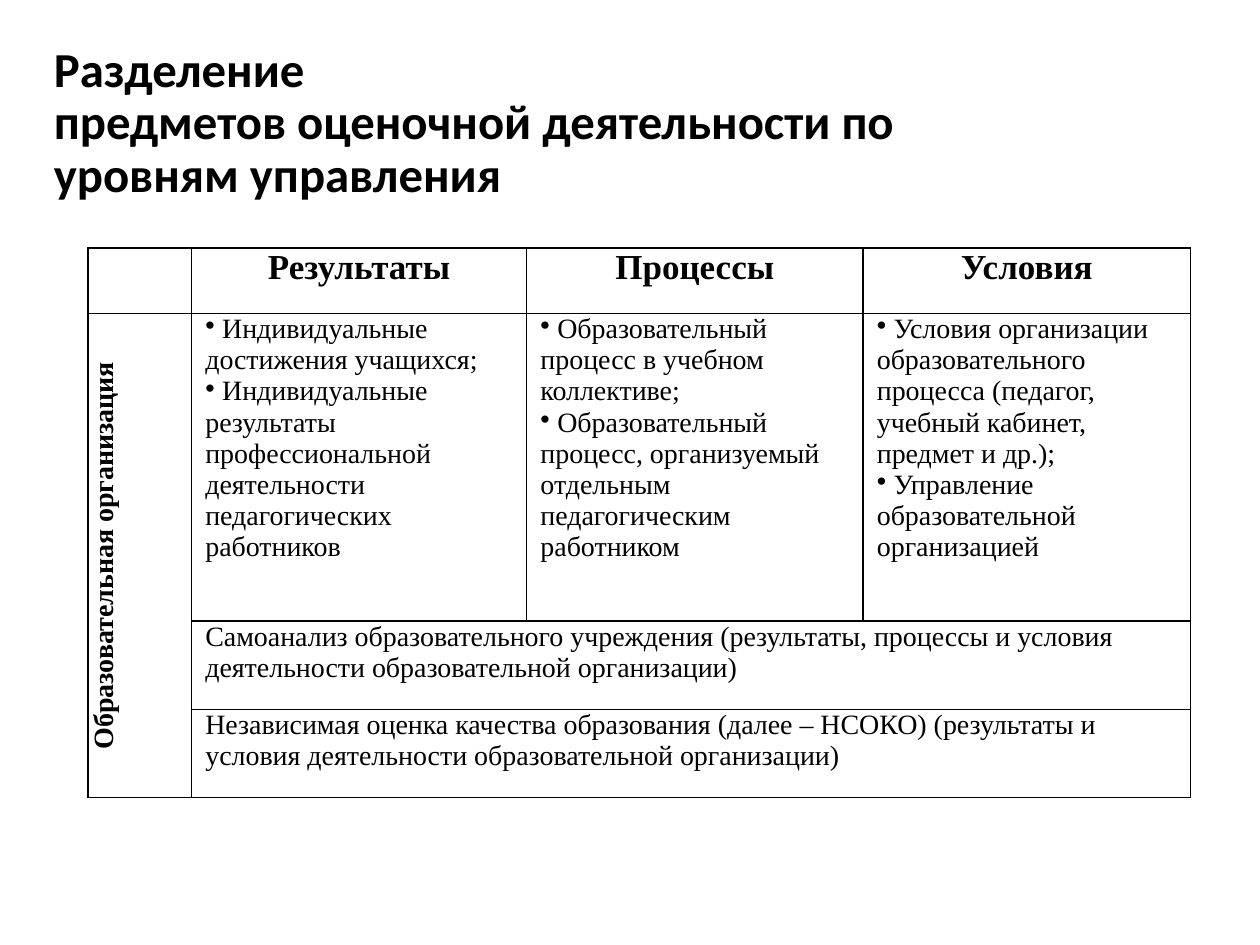
from dataclasses import dataclass

from lxml import etree
from pptx import Presentation
from pptx import util as u
from pptx.dml.color import RGBColor
from pptx.enum import text
from pptx.oxml import ns

COLORS = {"ink": "000000", "paper": "FFFFFF"}
COLUMN_WIDTHS = (0.82, 2.66, 2.67, 2.6)
ROW_HEIGHTS = (0.52, 2.44, 0.7, 0.7)
MARGINS = {"margin_left": 0.02, "margin_right": 0.02, "margin_top": 0, "margin_bottom": 0}
BODY = {"name": "Times New Roman", "size": u.Pt(16), "bold": False}
SIDE = BODY | {"bold": True}
HEADING = SIDE | {"size": u.Pt(20)}
TITLE = {"name": "Calibri", "size": u.Pt(27.9), "bold": True}


@dataclass
class Entry:
    row: int
    column: int
    lines: tuple[str, ...]
    font: dict
    rows: int = 1
    columns: int = 1
    centered: bool = False
    indented: bool = False
    bulleted: bool = False


HEADINGS = ("Результаты", "Процессы", "Условия")
SUBJECTS = (
    (" Индивидуальные достижения учащихся;",
     " Индивидуальные результаты профессиональной деятельности педагогических работников"),
    (" Образовательный процесс в учебном коллективе;",
     " Образовательный процесс, организуемый отдельным педагогическим работником"),
    (" Условия организации образовательного процесса (педагог, учебный кабинет, предмет и др.);",
     " Управление образовательной организацией"),
)
ASSESSMENTS = (
    "Самоанализ образовательного учреждения (результаты, процессы и условия "
    "деятельности образовательной организации)",
    "Независимая оценка качества образования (далее – НСОКО) (результаты и "
    "условия деятельности образовательной организации)",
)
ENTRIES = [
    *(Entry(0, column, (heading,), HEADING, centered=True)
      for column, heading in enumerate(HEADINGS, 1)),
    Entry(1, 0, ("Образовательная организация",), SIDE, rows=3, centered=True),
    *(Entry(1, column, subjects, BODY, indented=True, bulleted=True)
      for column, subjects in enumerate(SUBJECTS, 1)),
    *(Entry(row, 1, (assessment,), BODY, columns=3, indented=True)
      for row, assessment in enumerate(ASSESSMENTS, 2)),
]


def add_element(parent, tag: str, **attributes):
    return etree.SubElement(parent, ns.qn(tag), attributes)


def style_font(font, values: dict) -> None:
    for name, value in values.items():
        setattr(font, name, value)
    font.color.rgb = RGBColor.from_string(COLORS["ink"])


def frame_cell(cell) -> None:
    for name, margin in MARGINS.items():
        setattr(cell, name, u.Inches(margin))
    properties = cell._tc.get_or_add_tcPr()
    for side in ("a:lnL", "a:lnR", "a:lnT", "a:lnB"):
        border = add_element(properties, side, w=str(u.Pt(1)))
        add_element(add_element(border, "a:solidFill"), "a:srgbClr", val=COLORS["ink"])
    cell.fill.background()


def indent_paragraph(paragraph, bulleted: bool) -> None:
    properties = paragraph._p.get_or_add_pPr()
    properties.set("marL", str(u.Inches(0.09)))
    properties.set("indent", "0")
    if bulleted:
        add_element(properties, "a:buChar", char="•")
    tabs = add_element(properties, "a:tabLst")
    add_element(tabs, "a:tab", pos=str(u.Inches(0.14)), algn="l")


def fill_entry(table, entry: Entry) -> None:
    cell = table.cell(entry.row, entry.column)
    if entry.rows * entry.columns > 1:
        cell.merge(table.cell(entry.row + entry.rows - 1, entry.column + entry.columns - 1))
    if entry.rows > 1:
        cell.vertical_anchor = text.MSO_ANCHOR.MIDDLE
        cell._tc.get_or_add_tcPr().set("vert", "vert270")
    for index, line in enumerate(entry.lines):
        frame = cell.text_frame
        paragraph = frame.add_paragraph() if index else frame.paragraphs[0]
        if entry.indented:
            indent_paragraph(paragraph, entry.bulleted)
        if entry.centered:
            paragraph.alignment = text.PP_ALIGN.CENTER
        run = paragraph.add_run()
        run.text = line
        style_font(run.font, entry.font)


def add_title(slide) -> None:
    title = slide.shapes.add_textbox(u.Inches(0.33), u.Inches(0.4), u.Inches(7.87), u.Inches(1.17))
    frame = title.text_frame
    frame.word_wrap = True
    frame.vertical_anchor = text.MSO_ANCHOR.MIDDLE
    paragraph = frame.paragraphs[0]
    paragraph.text = "Разделение\vпредметов оценочной деятельности по уровням управления"
    paragraph.line_spacing = 0.9
    for run in paragraph.runs:
        style_font(run.font, TITLE)


def add_subjects_table(slide) -> None:
    table = slide.shapes.add_table(
        len(ROW_HEIGHTS), len(COLUMN_WIDTHS), u.Inches(0.7), u.Inches(1.97),
        u.Inches(sum(COLUMN_WIDTHS)), u.Inches(sum(ROW_HEIGHTS))).table
    table.first_row = table.horz_banding = False
    for column, width in zip(table.columns, COLUMN_WIDTHS):
        column.width = u.Inches(width)
    for row, height in zip(table.rows, ROW_HEIGHTS):
        row.height = u.Inches(height)
    for cell in table.iter_cells():
        frame_cell(cell)
    for entry in ENTRIES:
        fill_entry(table, entry)


def main() -> None:
    deck = Presentation()
    deck.slide_width, deck.slide_height = u.Inches(10), u.Inches(7.5)
    slide = deck.slides.add_slide(deck.slide_layouts[6])
    slide.background.fill.solid()
    slide.background.fill.fore_color.rgb = RGBColor.from_string(COLORS["paper"])
    add_title(slide)
    add_subjects_table(slide)
    deck.save("out.pptx")


if __name__ == "__main__":
    main()
